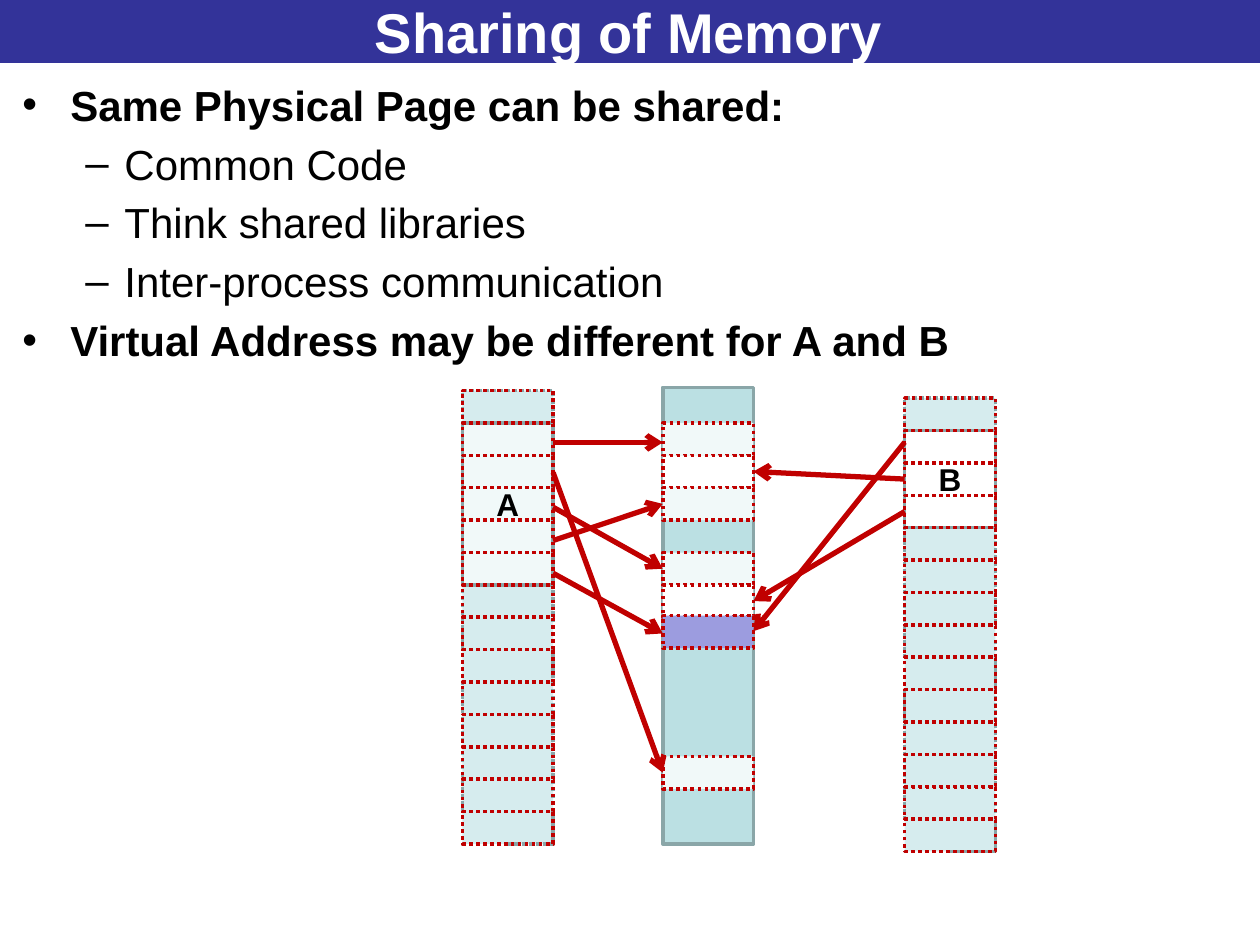
from dataclasses import dataclass

from lxml import etree
from pptx import Presentation
from pptx import util as u
from pptx.dml.color import RGBColor
from pptx.enum import dml, shapes, text
from pptx.oxml.ns import qn

COLORS = {
    "banner": "333399", "white": "FFFFFF", "black": "000000",
    "virtual": "D6ECEE", "mapped": "F1F9F9", "physical": "BBE0E3",
    "shared": "9C9CDF", "outline": "8AA6A8", "page": "C00000",
}
FONT = "Arial"
COLUMN_WIDTH = 0.72
ROW_HEIGHT = 0.257
PAGE_COUNT = 14


@dataclass(frozen=True)
class Column:
    left: float
    top: float

    @property
    def right(self) -> float:
        return self.left + COLUMN_WIDTH

    def row(self, number: float) -> float:
        return self.top + number * ROW_HEIGHT


@dataclass(frozen=True)
class Process:
    name: str
    column: Column
    mapped_rows: int
    mapped_color: str


@dataclass(frozen=True)
class Frame:
    row: float
    color: str


@dataclass(frozen=True)
class Mapping:
    process_row: float
    frame_row: float


@dataclass(frozen=True)
class Bullet:
    content: str
    level: int = 0


PHYSICAL = Column(5.26, 3.1)
PROCESS_A = Process("A", Column(3.67, 3.1), 5, "mapped")
PROCESS_B = Process("B", Column(7.18, 3.16), 3, "white")
FRAMES = [
    Frame(1, "mapped"), Frame(2, "white"), Frame(3, "mapped"), Frame(5, "mapped"),
    Frame(6, "white"), Frame(6.95, "shared"), Frame(11.3, "mapped"),
]
MAPPINGS_A = [
    Mapping(1.6, 1.6), Mapping(2.53, 11.8), Mapping(3.6, 5.5),
    Mapping(4.63, 3.5), Mapping(5.64, 7.5),
]
MAPPINGS_B = [Mapping(1.36, 7.43), Mapping(2.5, 2.5), Mapping(3.5, 6.5)]
BULLETS = [
    Bullet("Same Physical Page can be shared:"),
    Bullet("Common Code", 1),
    Bullet("Think shared libraries", 1),
    Bullet("Inter-process communication", 1),
    Bullet("Virtual Address may be different for A and B"),
]


def rgb(name: str) -> RGBColor:
    """Return the named palette colour."""
    return RGBColor.from_string(COLORS[name])


def write(paragraph, content: str, *, size: float, color: str = "black",
          bold: bool = True, align=text.PP_ALIGN.CENTER) -> None:
    """Fill a paragraph with one formatted run."""
    paragraph.alignment = align
    run = paragraph.add_run()
    run.text = content
    run.font.name = FONT
    run.font.size = u.Pt(size)
    run.font.bold = bold
    run.font.color.rgb = rgb(color)


def add_block(slide, column: Column, row: float, rows: float, *,
              fill: str | None = None, line: str = "page", dotted: bool = True):
    """Draw a run of rows in a memory column."""
    shape = slide.shapes.add_shape(
        shapes.MSO_SHAPE.RECTANGLE, u.Inches(column.left), u.Inches(column.row(row)),
        u.Inches(COLUMN_WIDTH), u.Inches(rows * ROW_HEIGHT))
    shape.shadow.inherit = False
    if fill:
        shape.fill.solid()
        shape.fill.fore_color.rgb = rgb(fill)
    else:
        shape.fill.background()
    shape.line.color.rgb = rgb(line)
    shape.line.width = u.Pt(2)
    if dotted:
        shape.line.dash_style = dml.MSO_LINE.ROUND_DOT
    return shape


def add_process(slide, process: Process) -> None:
    """Draw a virtual address space with its mapped pages and page grid."""
    add_block(slide, process.column, 0, PAGE_COUNT, fill="virtual", line="outline")
    mapped = add_block(slide, process.column, 1, process.mapped_rows,
                       fill=process.mapped_color, line="outline", dotted=False)
    mapped.text_frame.vertical_anchor = text.MSO_ANCHOR.MIDDLE
    write(mapped.text_frame.paragraphs[0], process.name, size=18)
    for row in range(PAGE_COUNT):
        add_block(slide, process.column, row, 1)


def add_mapping(slide, process: Process, mapping: Mapping) -> None:
    """Draw an arrow from a virtual page to its physical frame."""
    column = process.column
    on_left = column.left < PHYSICAL.left
    start = column.right if on_left else column.left
    end = PHYSICAL.left if on_left else PHYSICAL.right
    arrow = slide.shapes.add_connector(
        shapes.MSO_CONNECTOR.STRAIGHT,
        u.Inches(start), u.Inches(column.row(mapping.process_row)),
        u.Inches(end), u.Inches(PHYSICAL.row(mapping.frame_row)))
    arrow.line.color.rgb = rgb("page")
    arrow.line.width = u.Pt(3)
    etree.SubElement(arrow.line._get_or_add_ln(), qn("a:tailEnd"), type="arrow")
    etree.SubElement(arrow._element.spPr, qn("a:effectLst"))


def add_bullet(paragraph, bullet: Bullet) -> None:
    """Write a bulleted paragraph with a hanging indent."""
    margin, hang, mark = [(0.38, 0.38, "•"), (0.81, 0.31, "–")][bullet.level]
    paragraph.level = bullet.level
    write(paragraph, bullet.content, size=24, bold=bullet.level == 0,
          align=text.PP_ALIGN.LEFT)
    properties = paragraph._p.get_or_add_pPr()
    properties.set("marL", str(u.Inches(margin)))
    properties.set("indent", str(-u.Inches(hang)))
    spacing = etree.SubElement(properties, qn("a:spcBef"))
    etree.SubElement(spacing, qn("a:spcPct"), val="20000")
    etree.SubElement(properties, qn("a:buFont"), typeface=FONT)
    etree.SubElement(properties, qn("a:buChar"), char=mark)


def format_title(title, content: str) -> None:
    """Turn the title placeholder into the top banner."""
    title.left, title.top = u.Inches(-0.02), 0
    title.width, title.height = u.Inches(10.02), u.Inches(0.5)
    title.fill.solid()
    title.fill.fore_color.rgb = rgb("banner")
    title.text_frame.auto_size = text.MSO_AUTO_SIZE.NONE
    title.text_frame.vertical_anchor = text.MSO_ANCHOR.MIDDLE
    write(title.text_frame.paragraphs[0], content, size=32, color="white")


def main() -> None:
    """Build the memory sharing slide."""
    presentation = Presentation()
    presentation.slide_width, presentation.slide_height = u.Inches(10), u.Inches(7.5)
    slide = presentation.slides.add_slide(presentation.slide_layouts[5])
    format_title(slide.shapes.title, "Sharing of Memory")

    body = slide.shapes.add_textbox(
        u.Inches(0.08), u.Inches(0.58), u.Inches(9.83), u.Inches(6.67)).text_frame
    body.word_wrap = True
    for index, bullet in enumerate(BULLETS):
        add_bullet(body.add_paragraph() if index else body.paragraphs[0], bullet)

    add_block(slide, PHYSICAL, -0.1, PAGE_COUNT + 0.1,
              fill="physical", line="outline", dotted=False)
    for frame in FRAMES:
        add_block(slide, PHYSICAL, frame.row, 1, fill=frame.color)
    for process, mappings in ((PROCESS_A, MAPPINGS_A), (PROCESS_B, MAPPINGS_B)):
        add_process(slide, process)
        for mapping in mappings:
            add_mapping(slide, process, mapping)
    presentation.save("out.pptx")


if __name__ == "__main__":
    main()
